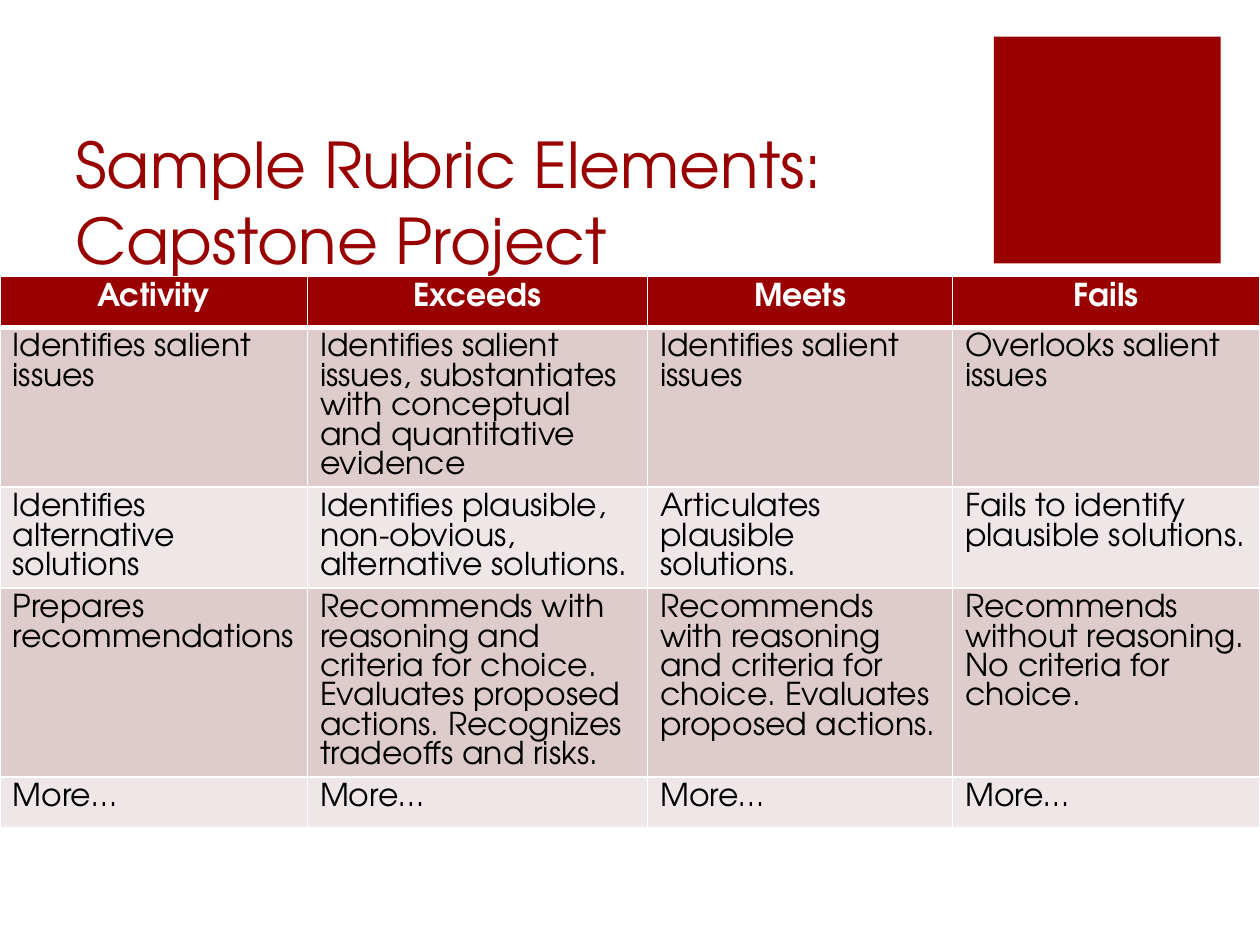
import pptx
import pptx.dml.color
import pptx.enum.shapes
import pptx.enum.text
import pptx.oxml
import pptx.oxml.ns
import pptx.util

Pt = pptx.util.Pt
RGBColor = pptx.dml.color.RGBColor
ALIGN = pptx.enum.text.PP_ALIGN

FONT = "TeX Gyre Adventor"
CRIMSON = RGBColor(0x99, 0x00, 0x00)
ROSE = RGBColor(0xDE, 0xCC, 0xCC)
PALE_ROSE = RGBColor(0xEF, 0xE7, 0xE7)
WHITE = RGBColor(0xFF, 0xFF, 0xFF)
BLACK = RGBColor(0x00, 0x00, 0x00)

COLUMN_WIDTHS = [175.7, 194.4, 174.2, 175.7]
ROW_HEIGHTS = [29, 91.4, 57.6, 108, 29]
RUBRIC = [
    ["Activity", "Exceeds", "Meets", "Fails"],
    ["Identifies salient issues",
     "Identifies salient issues, substantiates with conceptual and quantitative evidence",
     "Identifies salient issues",
     "Overlooks salient issues"],
    ["Identifies alternative solutions",
     "Identifies plausible, non-obvious, alternative solutions.",
     "Articulates plausible solutions.",
     "Fails to identify plausible solutions."],
    ["Prepares recommendations",
     "Recommends with reasoning and criteria for choice. Evaluates proposed actions. "
     "Recognizes tradeoffs and risks.",
     "Recommends with reasoning and criteria for choice. Evaluates proposed actions.",
     "Recommends without reasoning. No criteria for choice."],
    ["More…"] * 4,
]


def set_font(para, size, color, bold=False):
    para.font.name = FONT
    para.font.size = Pt(size)
    para.font.color.rgb = color
    para.font.bold = bold


def add_accent_square(page, left, top, side):
    square = page.shapes.add_shape(
        pptx.enum.shapes.MSO_SHAPE.RECTANGLE, Pt(left), Pt(top), Pt(side), Pt(side))
    square.shadow.inherit = False
    square.fill.solid()
    square.fill.fore_color.rgb = CRIMSON
    square.line.fill.background()


def place_title(page, text, left, top, width, height):
    title = page.shapes.title
    title.left, title.top, title.width, title.height = map(Pt, (left, top, width, height))
    frame = title.text_frame
    frame.text = text
    frame.word_wrap = True
    frame.auto_size = pptx.enum.text.MSO_AUTO_SIZE.NONE
    frame.vertical_anchor = pptx.enum.text.MSO_ANCHOR.BOTTOM
    para = frame.paragraphs[0]
    para.alignment = ALIGN.LEFT
    set_font(para, 36, CRIMSON)


def set_borders(cell, widths):
    """Draw white borders; widths maps the side letters L, R, T, B to points."""
    properties = cell._tc.get_or_add_tcPr()
    for position, (side, width) in enumerate(widths.items()):
        line = pptx.oxml.parse_xml(
            f'<a:ln{side} {pptx.oxml.ns.nsdecls("a")} w="{Pt(width)}">'
            f'<a:solidFill><a:srgbClr val="{WHITE}"/></a:solidFill></a:ln{side}>')
        properties.insert(position, line)


def fill_cell(cell, text, row):
    header = row == 0
    cell.text = text
    cell.fill.solid()
    cell.fill.fore_color.rgb = CRIMSON if header else ROSE if row % 2 else PALE_ROSE
    para = cell.text_frame.paragraphs[0]
    para.alignment = ALIGN.CENTER if header else ALIGN.LEFT
    para.line_spacing = Pt(16.8)
    set_font(para, 18, WHITE if header else BLACK, bold=header)
    set_borders(cell, {"L": 1, "R": 1, "T": 3 if row == 1 else 1, "B": 3 if header else 1})


def add_rubric_table(page, left, top):
    table = page.shapes.add_table(
        len(RUBRIC), len(COLUMN_WIDTHS), Pt(left), Pt(top),
        Pt(sum(COLUMN_WIDTHS)), Pt(sum(ROW_HEIGHTS))).table
    for column, width in zip(table.columns, COLUMN_WIDTHS):
        column.width = Pt(width)
    for row, height in enumerate(ROW_HEIGHTS):
        table.rows[row].height = Pt(height)
        for column, text in enumerate(RUBRIC[row]):
            fill_cell(table.cell(row, column), text, row)


def main():
    deck = pptx.Presentation()
    deck.slide_width, deck.slide_height = Pt(720), Pt(540)
    page = deck.slides.add_slide(deck.slide_layouts.get_by_name("Title Only"))
    add_accent_square(page, 568, 21, 129.6)
    place_title(page, "Sample Rubric Elements:\vCapstone Project", 36, 72, 512.6, 90)
    add_rubric_table(page, 0, 158)
    deck.save("out.pptx")


if __name__ == "__main__":
    main()
